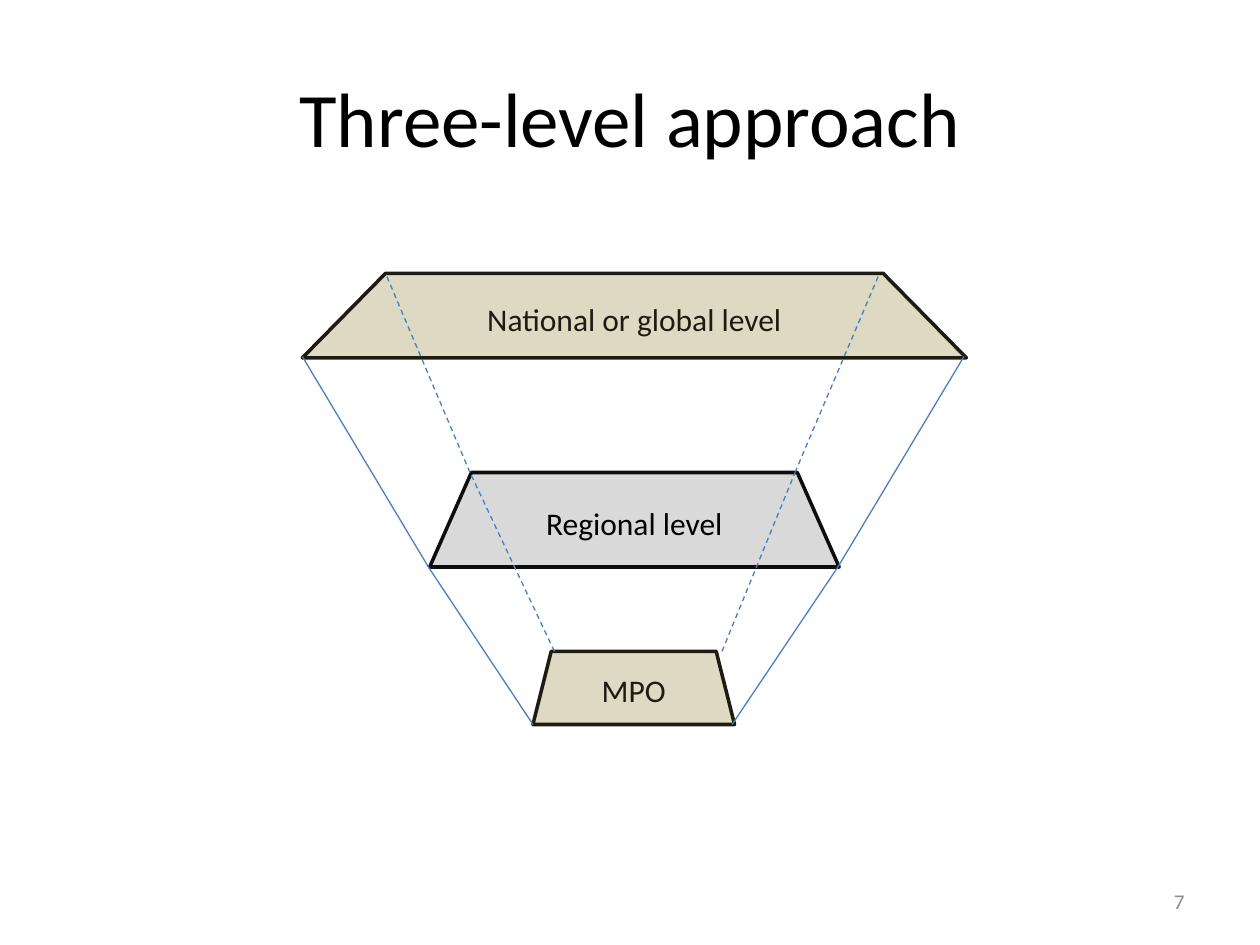
import itertools
import pptx
import pptx.util
import pptx.dml.color
import pptx.enum.dml
import pptx.enum.shapes
import pptx.enum.text
import pptx.oxml
import pptx.oxml.ns

Inches, Pt = pptx.util.Inches, pptx.util.Pt
Align = pptx.enum.text.PP_ALIGN

THEME = {
    "font": "Calibri",
    "title": 44, "label": 18, "small": 12,
    "black": "000000", "gray": "8C8C8C", "rail": "4B7EBC",
    "tan": ("DDD9C3", "1E1C11", "1E1C11"),  # fill, line, text
    "silver": ("D9D9D9", "0D0D0D", "000000"),
    "edge": 2, "thin": 0.75,
}

TITLE = "Three-level approach"
NUMBER = "7"

# label, (left, top, width, height), slant, colours
LEVELS = [
    ("Regional level", (3.41, 3.75, 3.25, 0.75), 0.442, "silver"),
    ("MPO", (4.23, 5.17, 1.6, 0.58), 0.25, "tan"),
    ("National or global level", (2.4, 2.17, 5.27, 0.67), 0.985, "tan"),
]

# points from the lowest level to the highest, dashed or not
RAILS = [
    ([(5.81, 5.75), (6.65, 4.5), (7.65, 2.83)], False),
    ([(4.23, 5.75), (3.4, 4.5), (2.4, 2.83)], False),
    ([(5.73, 5.17), (6.31, 3.75), (6.98, 2.17)], True),
    ([(4.4, 5.17), (3.73, 3.75), (3.06, 2.17)], True),
]


def color(name):
    return pptx.dml.color.RGBColor.from_string(name)


def write(shape, text, size="label", ink=THEME["black"], align=Align.CENTER):
    frame = shape.text_frame
    frame.word_wrap = True
    frame.vertical_anchor = pptx.enum.text.MSO_ANCHOR.MIDDLE
    par = frame.paragraphs[0]
    par.alignment = align
    run = par.add_run()
    run.text = text
    run.font.name = THEME["font"]
    run.font.size = Pt(THEME[size])
    run.font.color.rgb = color(ink)


def place(shape, box):
    shape.left, shape.top, shape.width, shape.height = map(Inches, box)


def add_level(slide, label, box, slant, style):
    fill, edge, ink = THEME[style]
    kind = pptx.enum.shapes.MSO_SHAPE.TRAPEZOID
    shape = slide.shapes.add_shape(kind, *map(Inches, box))
    shape.adjustments[0] = slant
    shape.shadow.inherit = False
    shape.fill.solid()
    shape.fill.fore_color.rgb = color(fill)
    shape.line.color.rgb = color(edge)
    shape.line.width = Pt(THEME["edge"])
    write(shape, label, ink=ink)


def add_rail(slide, points, dashed):
    kind = pptx.enum.shapes.MSO_CONNECTOR.STRAIGHT
    for start, end in itertools.pairwise(points):
        line = slide.shapes.add_connector(kind, *map(Inches, start + end))
        line.line.color.rgb = color(THEME["rail"])
        line.line.width = Pt(THEME["thin"])
        if dashed:
            line.line.dash_style = pptx.enum.dml.MSO_LINE.DASH
        props = line._element.spPr
        props.append(pptx.oxml.parse_xml(
            "<a:effectLst %s/>" % pptx.oxml.ns.nsdecls("a")))


def main():
    deck = pptx.Presentation()
    deck.slide_width, deck.slide_height = Inches(10), Inches(7.5)
    slide = deck.slides.add_slide(deck.slide_layouts.get_by_name("Title Only"))

    place(slide.shapes.title, (0.5, 0.3, 9, 1.25))
    write(slide.shapes.title, TITLE, size="title")
    page = slide.shapes.add_textbox(*map(Inches, (7.17, 6.95, 2.33, 0.4)))
    write(page, NUMBER, size="small", ink=THEME["gray"], align=Align.RIGHT)

    for level in LEVELS:
        add_level(slide, *level)
    for rail in RAILS:
        add_rail(slide, *rail)
    deck.save("out.pptx")


if __name__ == "__main__":
    main()
